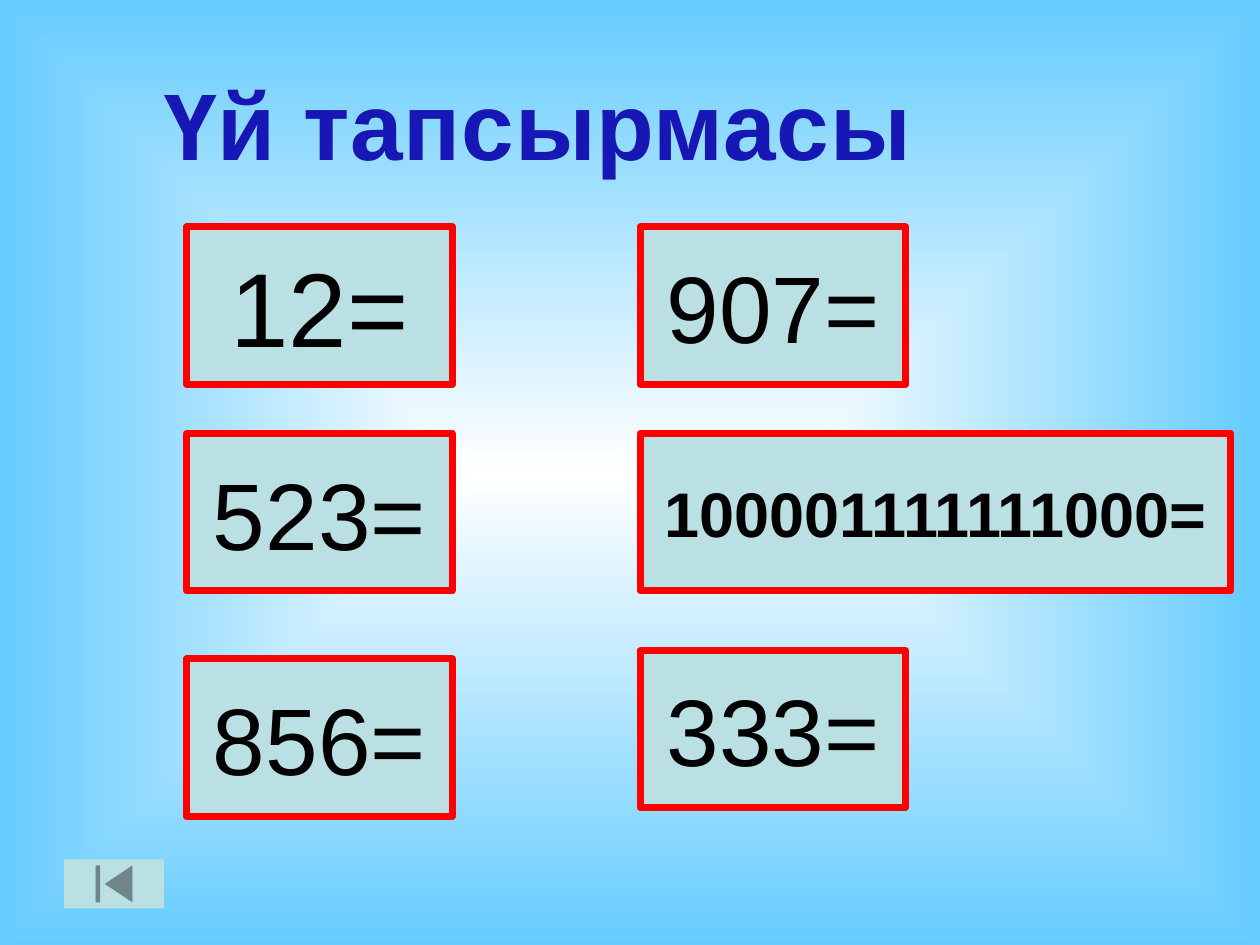
"""Build the homework slide with its six number boxes."""
import pptx
import pptx.dml.color
import pptx.enum.shapes
import pptx.enum.text
import pptx.oxml
import pptx.oxml.ns
import pptx.util

Inches = pptx.util.Inches
SHAPE = pptx.enum.shapes.MSO_SHAPE
TEXT = pptx.enum.text
HUES = {"glow": "FFFFFF", "sky": "66CCFF", "title": "1717B5",
        "box": "BBE0E3", "edge": "FF0000", "ink": "000000"}
LEFT, RIGHT = 1.48, 5.08
WIDE, HIGH = 2.11, 1.25
BOXES = [
    ("12=", LEFT, 1.8, WIDE, 60, False),
    ("523=", LEFT, 3.44, WIDE, 54, False),
    ("856=", LEFT, 5.23, WIDE, 54, False),
    ("907=", RIGHT, 1.8, WIDE, 54, False),
    ("100001111111000=", RIGHT, 3.44, 4.69, 36, True),
    ("333=", RIGHT, 5.16, WIDE, 54, False),
]


def color(name):
    """Return the named colour."""
    return pptx.dml.color.RGBColor.from_string(HUES[name])


def apply(item, values):
    """Set each attribute of the item from a dict."""
    for key, value in values.items():
        setattr(item, key, value)


def write(shape, text, size, bold, hue):
    """Put one centred line of text in the shape and return its run."""
    para = shape.text_frame.paragraphs[0]
    para.alignment = TEXT.PP_ALIGN.CENTER
    run = para.add_run()
    run.text = text
    apply(run.font, {"name": "Arial", "size": pptx.util.Pt(size), "bold": bold})
    run.font.color.rgb = color(hue)
    return run


def paint(slide):
    """Fill the background with a gradient from the centre outwards."""
    fill = slide.background.fill
    fill.gradient()
    for stop, name in zip(fill.gradient_stops, ("glow", "sky")):
        stop.color.rgb = color(name)
    qn, ns = pptx.oxml.ns.qn, pptx.oxml.ns.nsdecls("a")
    line = next(slide.element.iter(qn("a:lin")))
    line.getparent().replace(line, pptx.oxml.parse_xml(
        f'<a:path {ns} path="shape"><a:fillToRect l="50000" t="50000" '
        'r="50000" b="50000"/></a:path>'))


def head(slide, text):
    """Place and format the title."""
    title = slide.shapes.title
    apply(title, {"left": Inches(1.17), "top": Inches(0.47),
                  "width": Inches(6.2), "height": Inches(1.01)})
    apply(title.text_frame, {"word_wrap": False,
                             "auto_size": TEXT.MSO_AUTO_SIZE.SHAPE_TO_FIT_TEXT,
                             "vertical_anchor": TEXT.MSO_ANCHOR.TOP})
    run = write(title, text, 54, True, "title")
    run.font._element.set("spc", "50")


def block(slide, kind, *place):
    """Add a plain filled shape without a line."""
    shape = slide.shapes.add_shape(kind, *map(Inches, place))
    shape.shadow.inherit = False
    shape.fill.solid()
    shape.fill.fore_color.rgb = color("box")
    shape.line.fill.background()
    return shape


def box(slide, text, left, top, width, size, bold):
    """Add a red-edged box holding a number."""
    shape = block(slide, SHAPE.RECTANGLE, left, top, width, HIGH)
    shape.line.color.rgb = color("edge")
    shape.line.width = pptx.util.Pt(4)
    shape.text_frame.vertical_anchor = TEXT.MSO_ANCHOR.MIDDLE
    write(shape, text, size, bold, "ink")


def main():
    """Build and save the slide."""
    deck = pptx.Presentation()
    apply(deck, {"slide_width": Inches(10), "slide_height": Inches(7.5)})
    slide = deck.slides.add_slide(deck.slide_layouts[5])
    paint(slide)
    head(slide, "Үй тапсырмасы")
    for row in BOXES:
        box(slide, *row)
    block(slide, SHAPE.ACTION_BUTTON_BEGINNING, 0.51, 6.82, 0.79, 0.39)
    deck.save("out.pptx")


if __name__ == "__main__":
    main()
